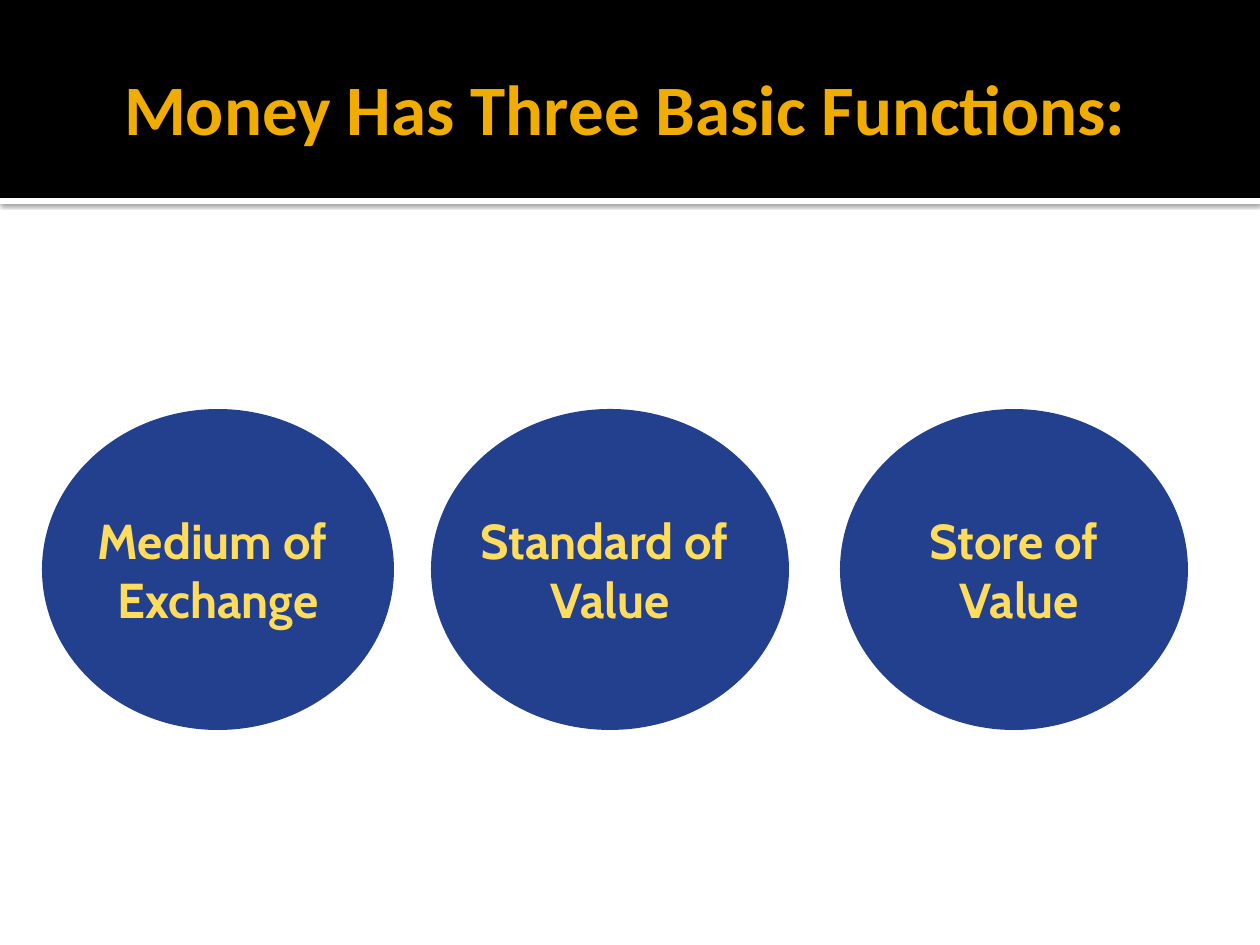
"""Build a slide that names the three basic functions of money."""
import lxml.etree
import pptx
import pptx.dml.color
import pptx.enum.shapes
import pptx.enum.text
import pptx.oxml
import pptx.util

PX = 914400 / 126
BLACK = pptx.dml.color.RGBColor(0x00, 0x00, 0x00)
WHITE = pptx.dml.color.RGBColor(0xFF, 0xFF, 0xFF)
GOLD = pptx.dml.color.RGBColor(0xF0, 0xAD, 0x00)
BLUE = pptx.dml.color.RGBColor(0x23, 0x40, 0x8F)
YELLOW = pptx.dml.color.RGBColor(0xFF, 0xDC, 0x5B)
SHADOW = (
    '<a:effectLst xmlns:a="http://schemas.openxmlformats.org/drawingml/2006/main">'
    '<a:outerShdw blurRad="31750" dist="10160" dir="5400000" rotWithShape="0">'
    '<a:srgbClr val="000000"><a:alpha val="60000"/></a:srgbClr>'
    '</a:outerShdw></a:effectLst>'
)


def px(*values):
    return [pptx.util.Emu(round(v * PX)) for v in values]


def write(tf, lines, *, font, size, color, wrap):
    tf.word_wrap = wrap
    tf.vertical_anchor = pptx.enum.text.MSO_ANCHOR.MIDDLE
    for i, line in enumerate(lines):
        p = tf.add_paragraph() if i else tf.paragraphs[0]
        p.alignment = pptx.enum.text.PP_ALIGN.CENTER
        r = p.add_run()
        r.text = line
        r.font.name = font
        r.font.size = pptx.util.Pt(size)
        r.font.bold = True
        r.font.color.rgb = color


prs = pptx.Presentation()
prs.slide_width, prs.slide_height = px(1260, 945)
s = prs.slides.add_slide(prs.slide_layouts[6])

for top, height, color in [(198, 6, WHITE), (0, 198, BLACK)]:
    sp = s.shapes.add_shape(pptx.enum.shapes.MSO_SHAPE.RECTANGLE, *px(0, top, 1260, height))
    sp.fill.solid()
    sp.fill.fore_color.rgb = color
    sp.line.fill.background()
    if color == WHITE:
        sp._element.spPr.append(lxml.etree.fromstring(SHADOW, pptx.oxml.oxml_parser))
    else:
        sp.shadow.inherit = False

title = s.shapes.add_textbox(*px(63, 21, 1134, 173))
tf = title.text_frame
tf.margin_left, tf.margin_top, tf.margin_right, tf.margin_bottom = px(13, 6, 6, 6)
write(tf, ["Money Has Three Basic Functions: "], font="Calibri", size=40.5, color=GOLD, wrap=True)

for left, width, lines in [
    (42, 352, ["Medium of ", "Exchange"]),
    (431, 358, ["Standard of ", "Value"]),
    (840, 348, ["Store of", " Value"]),
]:
    sp = s.shapes.add_shape(pptx.enum.shapes.MSO_SHAPE.OVAL, *px(left, 409, width, 321))
    sp.shadow.inherit = False
    sp.fill.solid()
    sp.fill.fore_color.rgb = BLUE
    sp.line.fill.background()
    write(sp.text_frame, lines, font="Cabin", size=28, color=YELLOW, wrap=False)

prs.save("out.pptx")
